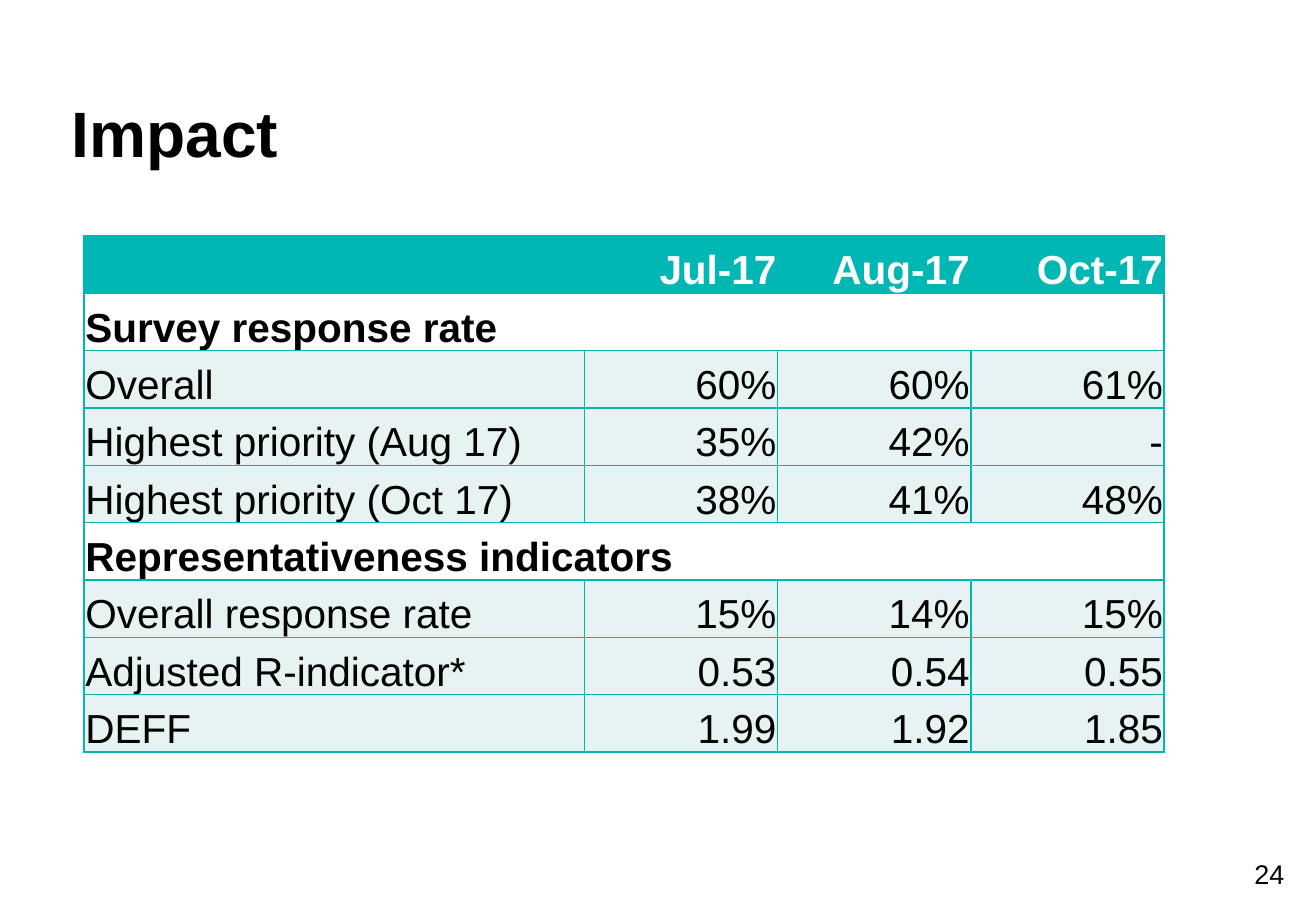
from dataclasses import dataclass

from lxml.etree import SubElement
from pptx import Presentation
from pptx.dml.color import RGBColor
from pptx.enum.text import MSO_ANCHOR, PP_ALIGN
from pptx.oxml.ns import qn
from pptx.slide import Slide
from pptx.table import Table, _Cell
from pptx.text.text import _Paragraph
from pptx.util import Pt

COLORS = {"teal": "00B7B4", "pale": "E7F3F2", "white": "FFFFFF", "black": "000000"}
FONT = "Arial"
TABLE_SIZE = 24
BORDER_WIDTH = 1
ROW_HEIGHT = 34
COLUMN_WIDTHS = [296.6, 114.5, 114.5, 114.5]


@dataclass(frozen=True)
class RowStyle:
    fill: str
    color: str
    bold: bool


@dataclass(frozen=True)
class Row:
    style: RowStyle
    texts: tuple[str, ...]


@dataclass(frozen=True)
class Label:
    text: str
    left: float
    top: float
    width: float
    height: float
    size: float
    bold: bool
    align: PP_ALIGN
    anchor: MSO_ANCHOR


HEADER = RowStyle("teal", "white", True)
SECTION = RowStyle("white", "black", True)
BODY = RowStyle("pale", "black", False)

ROWS = [
    Row(HEADER, ("", "Jul-17", "Aug-17", "Oct-17")),
    Row(SECTION, ("Survey response rate",)),
    Row(BODY, ("Overall", "60%", "60%", "61%")),
    Row(BODY, ("Highest priority (Aug 17)", "35%", "42%", "-")),
    Row(BODY, ("Highest priority (Oct 17)", "38%", "41%", "48%")),
    Row(SECTION, ("Representativeness indicators",)),
    Row(BODY, ("Overall response rate", "15%", "14%", "15%")),
    Row(BODY, ("Adjusted R-indicator*", "0.53", "0.54", "0.55")),
    Row(BODY, ("DEFF", "1.99", "1.92", "1.85")),
]

LABELS = [
    Label("Impact", 42.5, 36, 591.8, 64.8, 38, True, PP_ALIGN.LEFT, MSO_ANCHOR.BOTTOM),
    Label("24", 734.4, 508.3, 36, 19.4, 16, False, PP_ALIGN.CENTER, MSO_ANCHOR.TOP),
]


def add_run(paragraph: _Paragraph, text: str, size: float, color: str, bold: bool) -> None:
    run = paragraph.add_run()
    run.text = text
    run.font.name = FONT
    run.font.size = Pt(size)
    run.font.bold = bold
    run.font.color.rgb = RGBColor.from_string(COLORS[color])


def add_label(slide: Slide, label: Label) -> None:
    shape = slide.shapes.add_textbox(
        Pt(label.left), Pt(label.top), Pt(label.width), Pt(label.height)
    )
    frame = shape.text_frame
    frame.word_wrap = True
    frame.vertical_anchor = label.anchor
    frame.margin_left = frame.margin_right = frame.margin_top = frame.margin_bottom = 0
    paragraph = frame.paragraphs[0]
    paragraph.alignment = label.align
    add_run(paragraph, label.text, label.size, "black", label.bold)


def format_cell(cell: _Cell, fill: str) -> None:
    # Borders come before the fill in the cell properties
    properties = cell._tc.get_or_add_tcPr()
    for side in ("a:lnL", "a:lnR", "a:lnT", "a:lnB"):
        line = SubElement(properties, qn(side), w=str(Pt(BORDER_WIDTH)))
        solid = SubElement(line, qn("a:solidFill"))
        SubElement(solid, qn("a:srgbClr"), val=COLORS["teal"])
    cell.fill.solid()
    cell.fill.fore_color.rgb = RGBColor.from_string(COLORS[fill])
    cell.vertical_anchor = MSO_ANCHOR.BOTTOM
    cell.margin_left = cell.margin_right = cell.margin_top = Pt(0.75)
    cell.margin_bottom = 0


def fill_row(table: Table, index: int, row: Row) -> None:
    last_column = len(COLUMN_WIDTHS) - 1
    for column in range(last_column + 1):
        format_cell(table.cell(index, column), row.style.fill)
    if len(row.texts) == 1:
        table.cell(index, 0).merge(table.cell(index, last_column))
    for column, text in enumerate(row.texts):
        if text:
            paragraph = table.cell(index, column).text_frame.paragraphs[0]
            paragraph.alignment = PP_ALIGN.RIGHT if column else PP_ALIGN.LEFT
            add_run(paragraph, text, TABLE_SIZE, row.style.color, row.style.bold)


def add_impact_table(slide: Slide) -> None:
    table = slide.shapes.add_table(
        len(ROWS), len(COLUMN_WIDTHS), Pt(49.9), Pt(139.9),
        Pt(sum(COLUMN_WIDTHS)), Pt(ROW_HEIGHT * len(ROWS)),
    ).table
    table.horz_banding = False
    for column, width in zip(table.columns, COLUMN_WIDTHS):
        column.width = Pt(width)
    for index, row in enumerate(ROWS):
        table.rows[index].height = Pt(ROW_HEIGHT)
        fill_row(table, index, row)


def main() -> None:
    presentation = Presentation()
    presentation.slide_width = Pt(780)
    presentation.slide_height = Pt(540)
    slide = presentation.slides.add_slide(presentation.slide_layouts[6])

    # Title and page number
    for label in LABELS:
        add_label(slide, label)

    # Response rates and indicators by month
    add_impact_table(slide)

    presentation.save("out.pptx")


if __name__ == "__main__":
    main()
